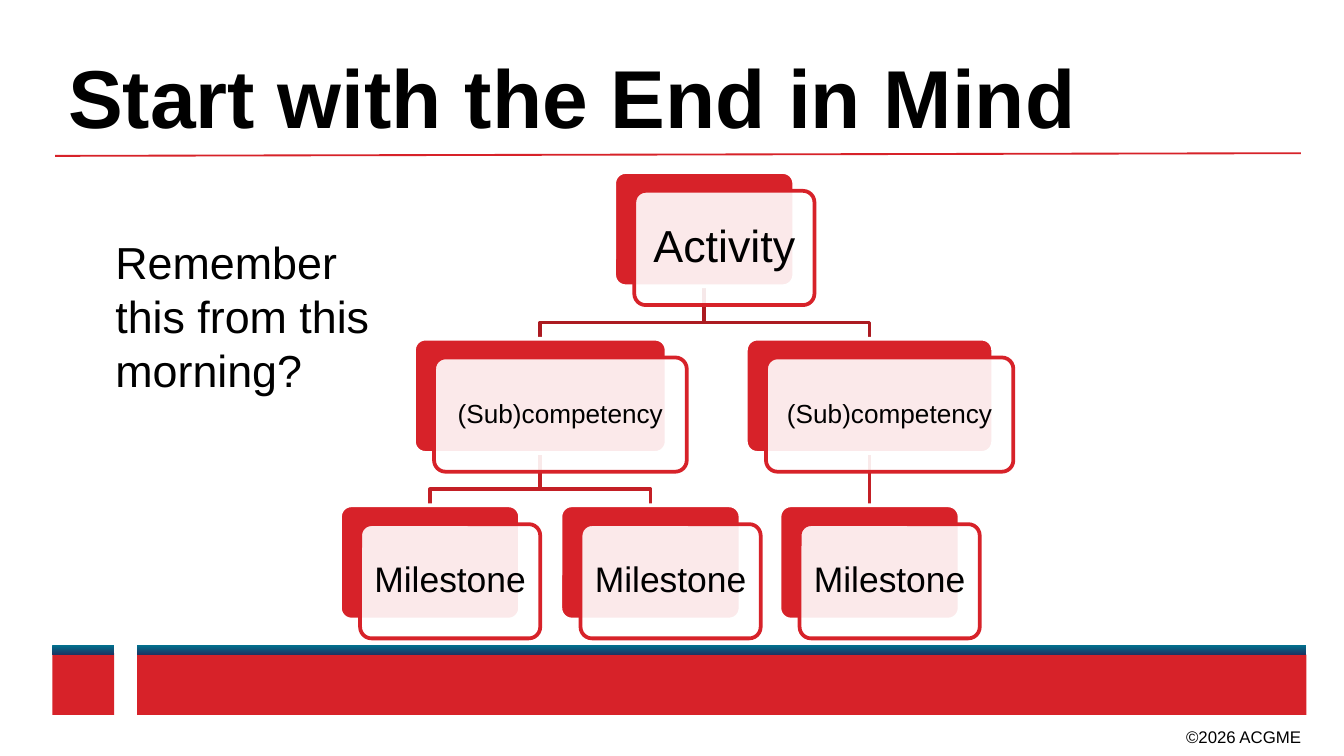
from lxml import etree
from pptx import Presentation
from pptx.dml.color import RGBColor
from pptx.enum import shapes, text
from pptx.oxml.ns import qn
from pptx.util import Inches, Pt

RED, WHITE, BLACK = "D72229", "FFFFFF", "000000"


def paint(color_format, hex_color):
    """Set the colour of a solid fill, line or font."""
    if hasattr(color_format, "solid"):
        color_format.solid()
        color_format = color_format.fore_color
    else:
        color_format = color_format.color
    color_format.rgb = RGBColor.from_string(hex_color)


def write(shape, words, size, align, anchor, wrap=True, bold=False):
    """Put one run of Arial text into a shape."""
    frame = shape.text_frame
    frame.word_wrap = wrap
    frame.vertical_anchor = anchor
    para = frame.paragraphs[0]
    para.alignment = align
    span = para.add_run()
    span.text = words
    span.font.name = "Arial"
    span.font.size = Pt(size)
    span.font.bold = bold
    paint(span.font, BLACK)
    return para


# A 16:9 slide
deck = Presentation()
deck.slide_width, deck.slide_height = Inches(10), Inches(10 * 9 / 16)
page = deck.slides.add_slide(deck.slide_layouts[6])
align, anchor = text.PP_ALIGN, text.MSO_ANCHOR

# Footer bars: a red block under a thin blue gradient strip
for left, width, top in ((0.39, 0.46, 4.86), (1.02, 8.7, 4.87)):
    block = page.shapes.add_shape(shapes.MSO_SHAPE.RECTANGLE, Inches(left),
                                  Inches(top), Inches(width), Inches(5.32 - top))
    strip = page.shapes.add_shape(shapes.MSO_SHAPE.RECTANGLE, Inches(left),
                                  Inches(4.8), Inches(width), Inches(0.07))
    paint(block.fill, RED)
    strip.fill.gradient()
    strip.fill.gradient_angle = 270
    for stop, position, color in zip(strip.fill.gradient_stops, (0, 1),
                                     ("00728F", "1C3563")):
        stop.position = position
        stop.color.rgb = RGBColor.from_string(color)
    for bar in (block, strip):
        bar.line.fill.background()
        bar.shadow.inherit = False

# Copyright line
box = page.shapes.add_textbox(Inches(8.71), Inches(5.36), Inches(1.07), Inches(0.25))
write(box, "©2026 ACGME", 9, align.RIGHT, anchor.TOP, wrap=False)

# Title and the rule below it
box = page.shapes.add_textbox(Inches(0.41), Inches(0.16), Inches(9.27), Inches(0.97))
write(box, "Start with the End in Mind", 44, align.LEFT, anchor.BOTTOM, bold=True)
rule = page.shapes.add_connector(shapes.MSO_CONNECTOR.STRAIGHT, Inches(0.41),
                                 Inches(1.16), Inches(9.68), Inches(1.14))
paint(rule.line, RED)
rule.line.width = Pt(1)
etree.SubElement(rule._element.spPr, qn("a:effectLst"))

# Tree: centre of the card, level, width, words, text size, inset, parent
row_tops = (1.28, 2.52, 3.76)
card_height = 0.85
branch_colors = ("AC1B21", "C31F25")
nodes = (
    (5.24, 0, 1.34, "Activity", 24, 0.1, None),
    (4.02, 1, 1.88, "(Sub)competency", 14, 0.06, 0),
    (3.2, 2, 1.34, "Milestone", 19, 0.08, 1),
    (4.84, 2, 1.34, "Milestone", 19, 0.08, 1),
    (6.47, 1, 1.84, "(Sub)competency", 14, 0.06, 0),
    (6.47, 2, 1.34, "Milestone", 19, 0.08, 4),
)

# Branches, drawn behind the cards
for center, level, *_, parent in nodes:
    if parent is None:
        continue
    start, end = nodes[parent][0], center
    top, bottom = row_tops[level - 1] + card_height, row_tops[level]
    if start == end:
        branch = page.shapes.add_connector(
            shapes.MSO_CONNECTOR.STRAIGHT, Inches(start), Inches(top),
            Inches(end), Inches(bottom))
        etree.SubElement(branch._element.spPr, qn("a:effectLst"))
    else:
        bend = top + 0.27
        builder = page.shapes.build_freeform(Inches(start), Inches(top))
        builder.add_line_segments(
            [(Inches(x), Inches(y))
             for x, y in ((start, bend), (end, bend), (end, bottom))], close=False)
        branch = builder.convert_to_shape()
        branch.fill.background()
        branch.shadow.inherit = False
    paint(branch.line, branch_colors[level - 1])
    branch.line.width = Pt(2)

# Cards: a red back and a translucent white front with the words
for center, level, width, words, size, inset, parent in nodes:
    for shift_x, shift_y, fill, line in ((0, 0, RED, WHITE), (0.15, 0.14, WHITE, RED)):
        card = page.shapes.add_shape(
            shapes.MSO_SHAPE.ROUNDED_RECTANGLE, Inches(center - width / 2 + shift_x),
            Inches(row_tops[level] + shift_y), Inches(width), Inches(card_height))
        card.adjustments[0] = 0.1
        card.shadow.inherit = False
        paint(card.fill, fill)
        paint(card.line, line)
        card.line.width = Pt(2)
    front_color = card._element.spPr.find(qn("a:solidFill"))[0]
    etree.SubElement(front_color, qn("a:alpha"), val="90000")
    frame = card.text_frame
    frame.margin_left = frame.margin_right = Inches(inset)
    frame.margin_top = frame.margin_bottom = Inches(inset)
    para = write(card, words, size, align.CENTER, anchor.MIDDLE)
    para.line_spacing = 0.9

# Side remark
box = page.shapes.add_textbox(Inches(0.76), Inches(1.7), Inches(2.12), Inches(1.31))
write(box, "Remember this from this morning?", 24, align.LEFT, anchor.TOP)

deck.save("out.pptx")
